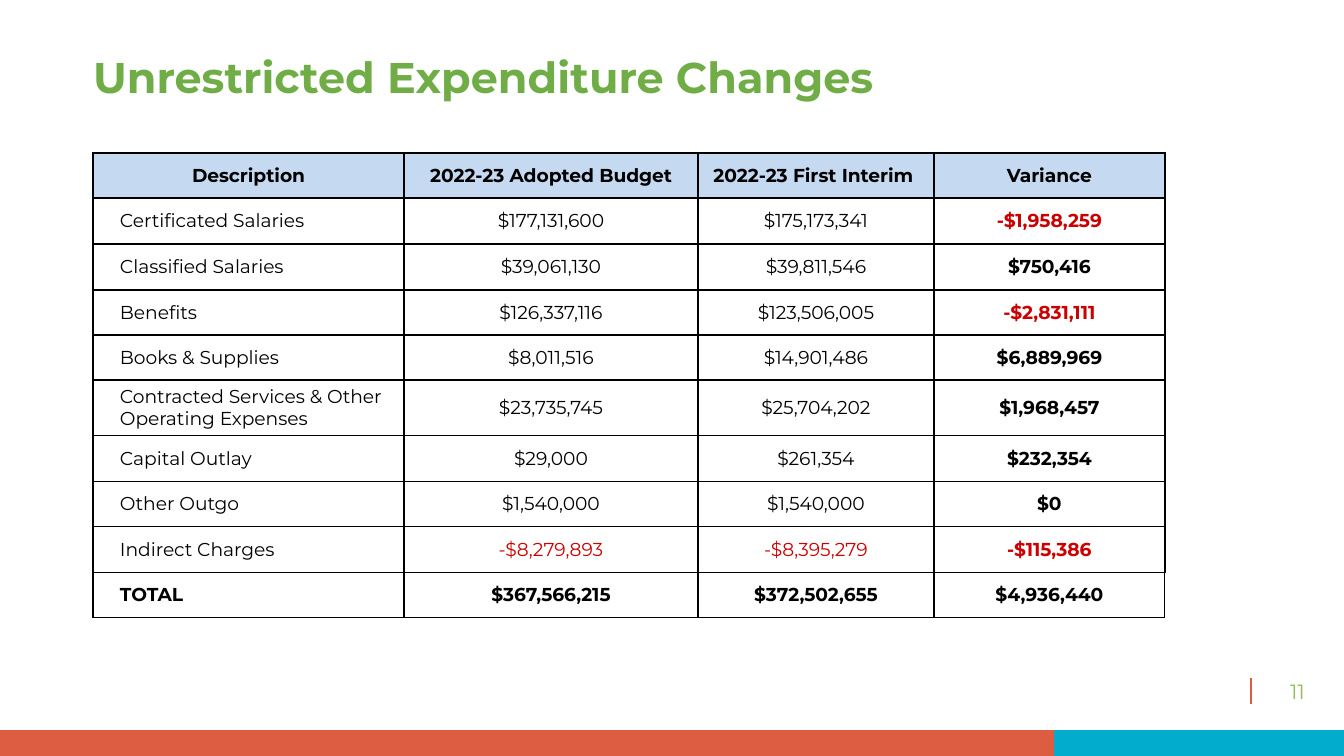
from itertools import pairwise
from pptx import Presentation
from pptx.dml.color import RGBColor
from pptx.enum.shapes import MSO_CONNECTOR, MSO_SHAPE
from pptx.enum.text import MSO_ANCHOR, PP_ALIGN
from pptx.oxml import parse_xml
from pptx.oxml.ns import nsdecls
from pptx.util import Pt

PX = 6804


def hue(code):
    return RGBColor.from_string(code)


def write(para, text, size, code, bold=False, align=PP_ALIGN.LEFT):
    para.alignment = align
    run = para.add_run()
    run.text = text
    form = {"name": "Montserrat", "size": Pt(size), "bold": bold}
    for key, val in form.items():
        setattr(run.font, key, val)
    run.font.color.rgb = hue(code)


deck = Presentation()
deck.slide_width = 1344 * PX
deck.slide_height = 756 * PX
slide = deck.slides.add_slide(deck.slide_layouts[5])
shapes = slide.shapes

for left, width, code in [(0, 1056, "DD5D43"), (1054, 290, "01ACCD")]:
    bar = shapes.add_shape(MSO_SHAPE.RECTANGLE, left * PX, 730 * PX, width * PX, 26 * PX)
    bar.shadow.inherit = False
    bar.fill.solid()
    bar.fill.fore_color.rgb = hue(code)
    bar.line.fill.background()

rule = shapes.add_connector(MSO_CONNECTOR.STRAIGHT, 1251 * PX, 678 * PX, 1251 * PX, 704 * PX)
rule.line.color.rgb = hue("DD5D43")
rule.line.width = Pt(1)
rule._element.spPr.append(parse_xml(f"<a:effectLst {nsdecls('a')}/>"))

title = shapes.title
number = shapes.add_textbox(0, 0, PX, PX)
spots = [
    (title, (93, 56, 902, 47), MSO_ANCHOR.TOP),
    (number, (1251, 678, 93, 26), MSO_ANCHOR.MIDDLE),
]
for box, place, anchor in spots:
    for key, val in zip(("left", "top", "width", "height"), place):
        setattr(box, key, val * PX)
    form = {
        "margin_left": 0, "margin_right": 0, "margin_top": 0, "margin_bottom": 0,
        "word_wrap": True, "vertical_anchor": anchor,
    }
    for key, val in form.items():
        setattr(box.text_frame, key, val)
head = title.text_frame.paragraphs[0]
head.line_spacing = 0.9
write(head, "Unrestricted Expenditure Changes", 23, "70AD47", True)
write(number.text_frame.paragraphs[0], "11", 11, "94BC56", align=PP_ALIGN.CENTER)

rows = [
    ("Description", "2022-23 Adopted Budget", "2022-23 First Interim ", "Variance"),
    ("Certificated Salaries", "$177,131,600", "$175,173,341", "-$1,958,259"),
    ("Classified Salaries", "$39,061,130", "$39,811,546", "$750,416"),
    ("Benefits", "$126,337,116", "$123,506,005", "-$2,831,111"),
    ("Books & Supplies", "$8,011,516", "$14,901,486", "$6,889,969"),
    ("Contracted Services & Other Operating Expenses", "$23,735,745", "$25,704,202", "$1,968,457"),
    ("Capital Outlay", "$29,000", "$261,354", "$232,354"),
    ("Other Outgo", "$1,540,000", "$1,540,000", "$0"),
    ("Indirect Charges", "-$8,279,893", "-$8,395,279", "-$115,386"),
    ("TOTAL", "$367,566,215", "$372,502,655", "$4,936,440"),
]
across = [93, 404, 698, 934, 1165]
down = [153, 198, 244, 290, 335, 380, 436, 482, 527, 573, 618]
last = len(rows) - 1
grid = shapes.add_table(
    len(rows), 4, across[0] * PX, down[0] * PX,
    (across[-1] - across[0]) * PX, (down[-1] - down[0]) * PX,
).table
grid.first_row = False
grid.horz_banding = False
for col, (a, b) in zip(grid.columns, pairwise(across)):
    col.width = (b - a) * PX
for row, (a, b) in zip(grid.rows, pairwise(down)):
    row.height = (b - a) * PX

for r, row in enumerate(rows):
    for c, text in enumerate(row):
        cell = grid.cell(r, c)
        label = c == 0 and r > 0
        form = {
            "margin_left": 27 * PX if label else 0, "margin_right": 0,
            "margin_top": 0, "margin_bottom": 0,
            "vertical_anchor": MSO_ANCHOR.MIDDLE,
        }
        for key, val in form.items():
            setattr(cell, key, val)
        bold = r in (0, last) or c == 3
        code = "CC0000" if text.startswith("-") else "000000"
        align = PP_ALIGN.LEFT if label else PP_ALIGN.CENTER
        write(cell.text_frame.paragraphs[0], text, 10, code, bold, align)
        props = cell._tc.get_or_add_tcPr()
        for side in "LRTB":
            thick = (side == "T" and r == 0) or (side == "R" and c == 3 and r < last)
            props.append(parse_xml(
                f'<a:ln{side} {nsdecls("a")} w="{Pt(1 if thick else 0.75)}">'
                f'<a:solidFill><a:srgbClr val="000000"/></a:solidFill></a:ln{side}>'
            ))
        if r == 0:
            cell.fill.solid()
            cell.fill.fore_color.rgb = hue("C5D9F1")
        else:
            cell.fill.background()

deck.save("out.pptx")
